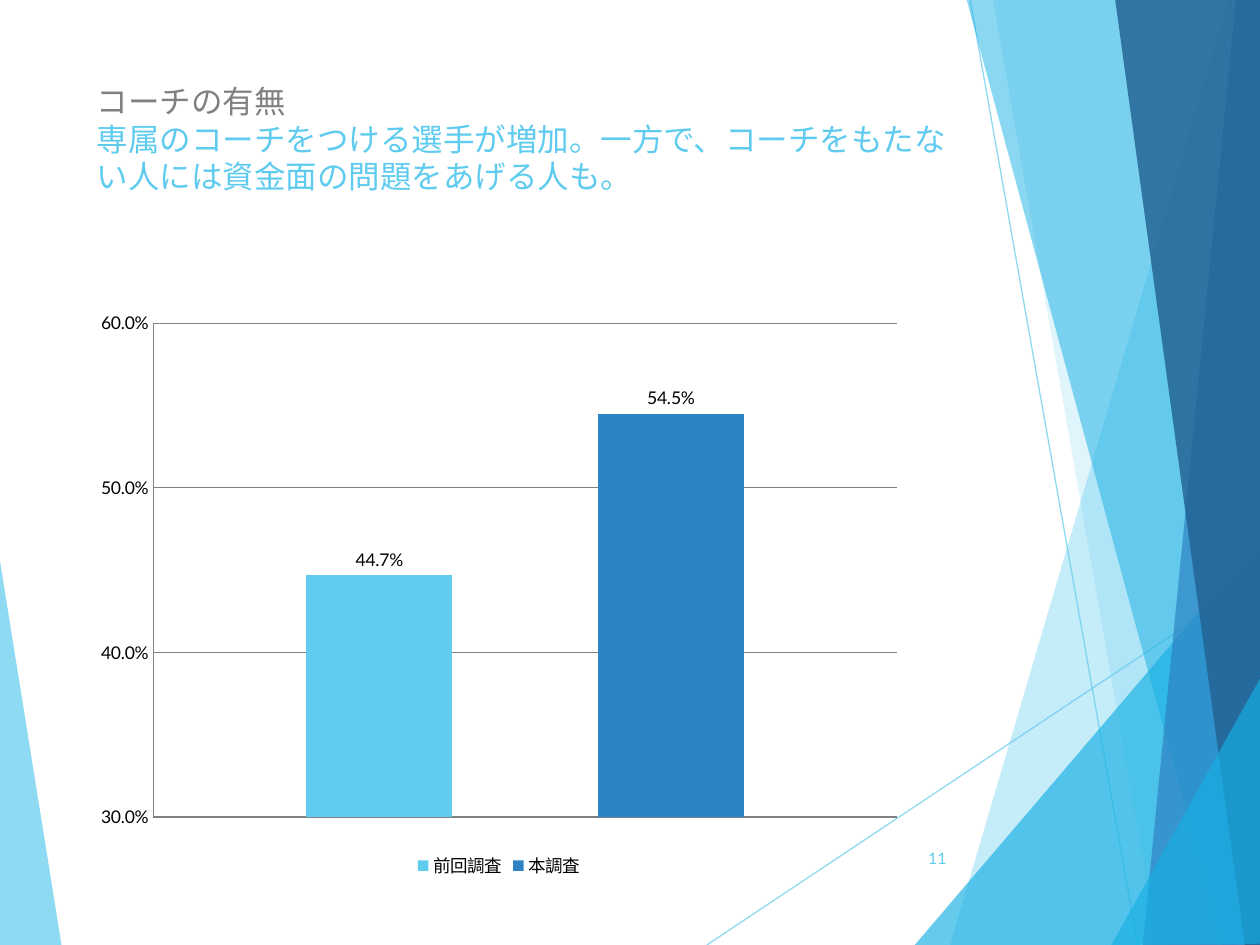
"""Build the coach survey slide with its faceted border and column chart."""
from dataclasses import dataclass

from lxml import etree
from pptx import Presentation
from pptx.chart.data import CategoryChartData
from pptx.dml.color import RGBColor
from pptx.enum.chart import XL_CHART_TYPE, XL_LABEL_POSITION, XL_LEGEND_POSITION, XL_TICK_MARK
from pptx.enum.shapes import MSO_CONNECTOR
from pptx.enum.text import MSO_ANCHOR, PP_ALIGN
from pptx.oxml.ns import qn
from pptx.slide import Slide
from pptx.text.text import _Paragraph as Paragraph
from pptx.util import Inches, Pt

SKY = RGBColor(0x5F, 0xCB, 0xEF)
CYAN = RGBColor(0x17, 0xB0, 0xE4)
BLUE = RGBColor(0x2E, 0x83, 0xC3)
NAVY = RGBColor(0x22, 0x62, 0x92)
GRAY = RGBColor(0x80, 0x80, 0x80)
BLACK = RGBColor(0, 0, 0)
FONT = "Lato"
PERCENT = "0.0%"


@dataclass(frozen=True)
class Facet:
    points: tuple[tuple[float, float], ...]
    color: RGBColor
    opacity: int


@dataclass(frozen=True)
class Ray:
    start: tuple[float, float]
    end: tuple[float, float]


@dataclass(frozen=True)
class Survey:
    name: str
    share: float
    color: RGBColor


LEFT_FACET = Facet(((-0.01, 4.39), (0.49, 7.51), (-0.01, 7.5)), SKY, 70)
RAYS = (Ray((5.61, 7.5), (10.01, 4.57)), Ray((7.7, 0), (9.03, 7.5)))
RIGHT_FACETS = (
    Facet(((9.75, 0), (7.54, 7.5), (10.02, 7.51), (10.01, 0.01)), SKY, 36),
    Facet(((7.88, -0.01), (9.19, 7.5), (10.01, 7.5), (10.01, -0.01)), SKY, 20),
    Facet(((7.26, 7.5), (10, 4.29), (10.01, 7.5)), CYAN, 66),
    Facet(((7.67, -0.01), (9.7, 7.5), (10.01, 7.49), (10.01, -0.01)), CYAN, 50),
    Facet(((9.81, -0.01), (9.07, 7.5), (10.01, 7.5), (10, -0.01)), BLUE, 70),
    Facet(((8.85, -0.01), (9.88, 7.5), (10.02, 7.5), (10, -0.01)), NAVY, 82),
    Facet(((8.82, 7.5), (10.02, 5.35), (10.02, 7.49)), CYAN, 66),
)
SURVEYS = (Survey("前回調査", 0.447, SKY), Survey("本調査", 0.545, BLUE))


def set_opacity(properties: etree._Element, opacity: int) -> None:
    color = next(properties.iter(qn("a:srgbClr")))
    etree.SubElement(color, qn("a:alpha"), val=str(opacity * 1000))


def draw_facet(slide: Slide, facet: Facet) -> None:
    points = [(Inches(x), Inches(y)) for x, y in facet.points]
    builder = slide.shapes.build_freeform(*points[0], scale=1.0)
    builder.add_line_segments(points[1:], close=True)
    shape = builder.convert_to_shape()
    shape.shadow.inherit = False
    shape.fill.solid()
    shape.fill.fore_color.rgb = facet.color
    set_opacity(shape.element.spPr, facet.opacity)
    shape.line.fill.background()


def draw_ray(slide: Slide, ray: Ray) -> None:
    ends = [Inches(value) for value in ray.start + ray.end]
    connector = slide.shapes.add_connector(MSO_CONNECTOR.STRAIGHT, *ends)
    connector.line.color.rgb = SKY
    connector.line.width = Pt(0.75)
    properties = connector.element.spPr
    set_opacity(properties, 70)
    etree.SubElement(properties, qn("a:effectLst"))


def add_text_box(slide: Slide, left: float, top: float, width: float, height: float,
                 anchor: MSO_ANCHOR) -> Paragraph:
    shape = slide.shapes.add_textbox(Inches(left), Inches(top), Inches(width), Inches(height))
    shape.text_frame.word_wrap = True
    shape.text_frame.vertical_anchor = anchor
    return shape.text_frame.paragraphs[0]


def add_run(paragraph: Paragraph, text: str, size: float, color: RGBColor) -> None:
    run = paragraph.add_run()
    run.text = text
    run.font.size = Pt(size)
    run.font.name = FONT
    run.font.color.rgb = color


def draw_chart(slide: Slide) -> None:
    data = CategoryChartData(number_format=PERCENT)
    data.categories = ["1"]
    for survey in SURVEYS:
        data.add_series(survey.name, [survey.share])
    chart = slide.shapes.add_chart(XL_CHART_TYPE.COLUMN_CLUSTERED, Inches(0.67), Inches(2.39),
                                   Inches(6.58), Inches(4.62), data).chart
    chart.has_title = False
    chart.font.name = FONT
    chart.font.size = Pt(10)
    chart.font.color.rgb = BLACK
    chart.has_legend = True
    chart.legend.position = XL_LEGEND_POSITION.BOTTOM
    chart.legend.include_in_layout = False
    chart.category_axis.visible = False

    axis = chart.value_axis
    axis.minimum_scale, axis.maximum_scale, axis.major_unit = 0.3, 0.6, 0.1
    axis.major_tick_mark = axis.minor_tick_mark = XL_TICK_MARK.NONE
    axis.tick_labels.number_format = PERCENT
    axis.tick_labels.number_format_is_linked = False
    axis.has_major_gridlines = True
    for line in (axis.format.line, axis.major_gridlines.format.line):
        line.color.rgb = GRAY
        line.width = Pt(0.75)

    plot = chart.plots[0]
    plot.gap_width = 210
    plot.overlap = -100
    plot.vary_by_categories = False
    for series, survey in zip(plot.series, SURVEYS):
        series.format.fill.solid()
        series.format.fill.fore_color.rgb = survey.color
        labels = series.data_labels
        labels.show_value = True
        labels.number_format = PERCENT
        labels.number_format_is_linked = False
        labels.position = XL_LABEL_POSITION.OUTSIDE_END


def main() -> None:
    presentation = Presentation()
    presentation.slide_width = Inches(10)
    presentation.slide_height = Inches(7.5)
    slide = presentation.slides.add_slide(presentation.slide_layouts[6])

    draw_facet(slide, LEFT_FACET)
    for ray in RAYS:
        draw_ray(slide, ray)
    for facet in RIGHT_FACETS:
        draw_facet(slide, facet)

    title = add_text_box(slide, 0.67, 0.6, 6.94, 1.44, MSO_ANCHOR.TOP)
    add_run(title, "コーチの有無", 18, GRAY)
    title.add_line_break()
    add_run(title, "専属のコーチをつける選手が増加。一方で、コーチをもたない人には資金面の問題をあげる人も。",
            18, SKY)

    page_number = add_text_box(slide, 7.05, 6.61, 0.56, 0.4, MSO_ANCHOR.MIDDLE)
    page_number.alignment = PP_ALIGN.RIGHT
    add_run(page_number, "11", 9, SKY)

    draw_chart(slide)
    presentation.save("out.pptx")


if __name__ == "__main__":
    main()
